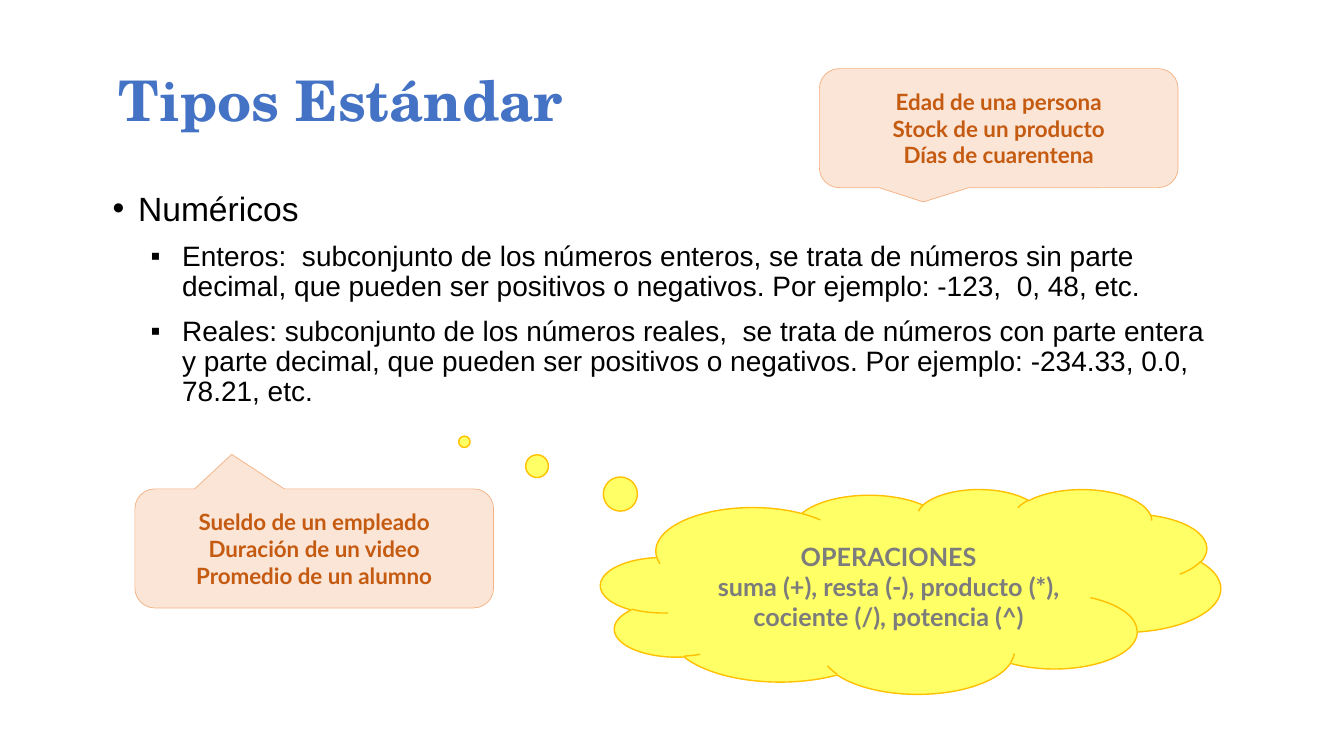
import pptx
import pptx.dml.color
import pptx.enum.shapes
import pptx.enum.text
import pptx.oxml.ns
import pptx.util
from lxml import etree

Cm = pptx.util.Cm
Pt = pptx.util.Pt
RGBColor = pptx.dml.color.RGBColor
Shapes = pptx.enum.shapes.MSO_SHAPE
Align = pptx.enum.text.PP_ALIGN
Anchor = pptx.enum.text.MSO_ANCHOR

BLUE = RGBColor(0x44, 0x72, 0xC4)
BLACK = RGBColor(0x00, 0x00, 0x00)
YELLOW = RGBColor(0xFF, 0xFF, 0x66)
GOLD = RGBColor(0xFF, 0xC0, 0x00)
GREY = RGBColor(0x7C, 0x7C, 0x7C)
PEACH = RGBColor(0xFB, 0xE5, 0xD6)
ORANGE = RGBColor(0xF4, 0xB1, 0x83)
RUST = RGBColor(0xC5, 0x5A, 0x11)

TITLE_FONT = {"name": "TeX Gyre Schola", "size": Pt(40), "bold": True}
CALLOUT_FONT = {"name": "Lato", "size": Pt(16), "bold": True}
CLOUD_FONT = {"name": "Lato", "size": Pt(18), "bold": True}

# Bullet character, left margin, hanging indent and text size per level
LEVELS = [("•", Cm(0.64), Cm(0.64), Pt(24)), ("▪", Cm(1.75), Cm(0.79), Pt(20))]

CALLOUT_SIZE = (Cm(9.04), Cm(3))
TYPES = [
    (0, "Numéricos"),
    (1, "Enteros:  subconjunto de los números enteros, se trata de números sin parte "
        "decimal, que pueden ser positivos o negativos. Por ejemplo: -123,  0, 48, etc."),
    (1, "Reales: subconjunto de los números reales,  se trata de números con parte entera "
        "y parte decimal, que pueden ser positivos o negativos. "
        "Por ejemplo: -234.33, 0.0, 78.21, etc."),
]
INTEGER_EXAMPLES = ["Edad de una persona", "Stock de un producto", "Días de cuarentena"]
REAL_EXAMPLES = ["Sueldo de un empleado", "Duración de un video", "Promedio de un alumno"]
OPERATIONS = ["OPERACIONES", "suma (+), resta (-), producto (*), cociente (/), potencia (^)"]


def set_attributes(target, values):
    for name, value in values.items():
        setattr(target, name, value)


def write_paragraphs(text_frame, lines, font, color, **paragraph_format):
    text_frame.word_wrap = True
    text_frame.text = "\n".join(lines)
    for paragraph in text_frame.paragraphs:
        set_attributes(paragraph, paragraph_format)
        for run in paragraph.runs:
            set_attributes(run.font, font)
            run.font.color.rgb = color


def add_title(slide, box, text):
    text_frame = slide.shapes.add_textbox(*box).text_frame
    write_paragraphs(text_frame, [text], TITLE_FONT, BLUE, line_spacing=0.9)


def add_bullet_list(slide, box, items):
    text_frame = slide.shapes.add_textbox(*box).text_frame
    write_paragraphs(text_frame, [text for _, text in items], {"name": "Arial"}, BLACK,
                     line_spacing=0.9, space_before=Pt(10))
    for paragraph, (level, _) in zip(text_frame.paragraphs, items):
        character, margin, hanging, size = LEVELS[level]
        paragraph.runs[0].font.size = size
        properties = paragraph._p.get_or_add_pPr()
        properties.set("marL", str(margin))
        properties.set("indent", str(-hanging))
        for tag, key, value in (("a:buFont", "typeface", "Arial"),
                                ("a:buChar", "char", character)):
            etree.SubElement(properties, pptx.oxml.ns.qn(tag)).set(key, value)


def add_bubble(slide, kind, box, tail, fill, line, line_width, lines, font, color):
    """Draw a callout whose tail offset is a share of its size; return it."""
    bubble = slide.shapes.add_shape(kind, *box)
    bubble.shadow.inherit = False
    bubble.fill.solid()
    bubble.fill.fore_color.rgb = fill
    bubble.line.color.rgb = line
    bubble.line.width = line_width
    for index, offset in enumerate(tail):
        bubble.adjustments[index] = offset
    bubble.text_frame.vertical_anchor = Anchor.MIDDLE
    write_paragraphs(bubble.text_frame, lines, font, color, alignment=Align.CENTER)
    return bubble


def add_examples(slide, box, tail, lines):
    add_bubble(slide, Shapes.ROUNDED_RECTANGULAR_CALLOUT, box, tail,
               PEACH, ORANGE, Pt(0.5), lines, CALLOUT_FONT, RUST)


def add_operations_cloud(slide, box, tail, lines):
    cloud = add_bubble(slide, Shapes.CLOUD_CALLOUT, box, tail,
                       YELLOW, GOLD, Pt(1), lines, CLOUD_FONT, GREY)
    sides = ("left", "top", "right", "bottom")
    set_attributes(cloud.text_frame, {f"margin_{side}": Cm(0.1) for side in sides})


def main():
    presentation = pptx.Presentation()
    set_attributes(presentation, {"slide_width": Cm(33.87), "slide_height": Cm(19.05)})
    slide = presentation.slides.add_slide(presentation.slide_layouts[6])
    top, lower_top = Cm(1.73), Cm(12.32)
    add_title(slide, (Cm(2.74), top, Cm(28.02), Cm(2.46)), "Tipos Estándar")
    add_bullet_list(slide, (Cm(2.59), Cm(4.72), Cm(28.22), Cm(12.95)), TYPES)
    add_operations_cloud(slide, (Cm(15.14), lower_top, Cm(15.62), Cm(5.16)),
                         (-0.72, -0.73), OPERATIONS)
    add_examples(slide, (Cm(20.65), top, *CALLOUT_SIZE), (-0.21, 0.62), INTEGER_EXAMPLES)
    add_examples(slide, (Cm(3.4), lower_top, *CALLOUT_SIZE), (-0.23, -0.79), REAL_EXAMPLES)
    presentation.save("out.pptx")


if __name__ == "__main__":
    main()
